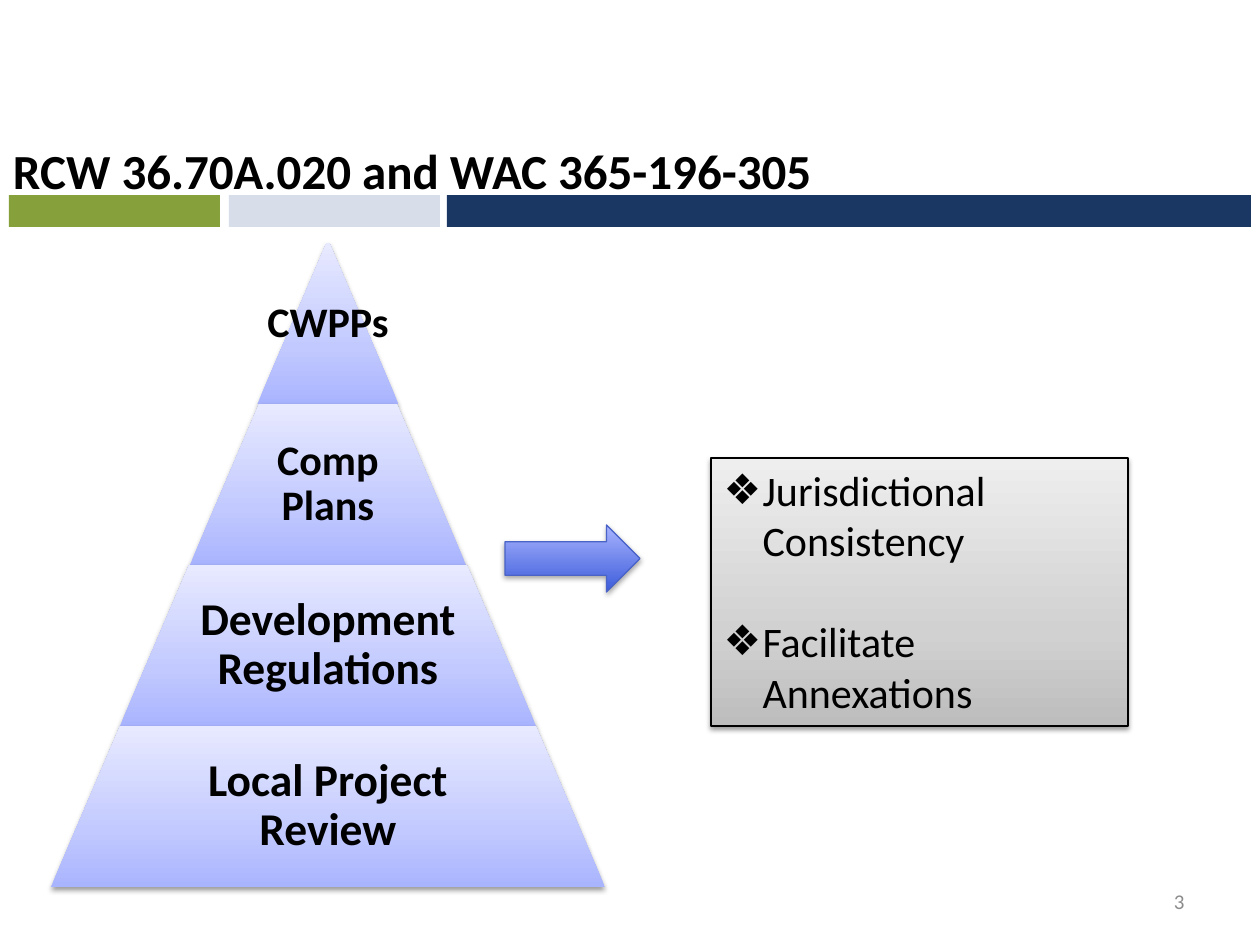
from dataclasses import dataclass

from lxml import etree
from pptx import Presentation
from pptx.dml.color import RGBColor
from pptx.enum.shapes import MSO_SHAPE
from pptx.enum.text import MSO_ANCHOR, MSO_AUTO_SIZE, PP_ALIGN
from pptx.oxml.ns import qn
from pptx.util import Emu, Pt

RECT, TRAP, ARROW = MSO_SHAPE.RECTANGLE, MSO_SHAPE.TRAPEZOID, MSO_SHAPE.RIGHT_ARROW
LEFT, MID, RIGHT = PP_ALIGN.LEFT, PP_ALIGN.CENTER, PP_ALIGN.RIGHT
TOP, CENTER = MSO_ANCHOR.TOP, MSO_ANCHOR.MIDDLE
FIXED = MSO_AUTO_SIZE.NONE
SCALE = 914400 / 126


@dataclass(frozen=True)
class Theme:
    font: str = "Calibri"
    ink: str = "000000"
    faint: str = "8C8C8C"
    edge: str = "4963C7"
    green: str = "86A13C"
    pale: str = "D7DEEA"
    navy: str = "1A3662"
    # Gradient stops run from bottom to top
    tier: tuple = ((0, "A9B4FF"), (35, "C2C9FF"), (100, "E8EAFF"))
    panel: tuple = ((0, "BDBDBD"), (35, "D1D1D1"), (100, "EEEEEE"))
    arrow: tuple = ((0, "3C5CDA"), (100, "A9B4FF"))
    title: int = 28
    large: int = 26
    body: int = 24
    small: int = 12


THEME = Theme()


def px(n):
    return Emu(round(n * SCALE))


def rgb(code):
    return RGBColor.from_string(code)


def apply(target, values):
    for name, value in values.items():
        setattr(target, name, value)


def place(shape, box):
    apply(shape, dict(zip(("left", "top", "width", "height"), map(px, box))))


def node(parent, tag, **attrs):
    return etree.SubElement(parent, qn(tag), {k: str(v) for k, v in attrs.items()})


def shade(shape, stops, alpha=38):
    """Give a shape an upward gradient and a soft shadow below."""
    shape.fill.gradient()
    shape.fill.gradient_angle = 90
    props = shape._element.spPr
    ramp = props.find(qn("a:gradFill")).find(qn("a:gsLst"))
    for old in list(ramp):
        ramp.remove(old)
    for pos, code in stops:
        node(node(ramp, "a:gs", pos=pos * 1000), "a:srgbClr", val=code)
    shape.shadow.inherit = False
    cast = node(props.find(qn("a:effectLst")), "a:outerShdw", blurRad=Pt(3.1),
                dist=Pt(1.6), dir=90 * 60000, rotWithShape=0)
    node(node(cast, "a:srgbClr", val=THEME.ink), "a:alpha", val=alpha * 1000)


def edge(shape, code=None):
    if code is None:
        shape.line.fill.background()
    else:
        shape.line.color.rgb = rgb(code)
        shape.line.width = Pt(0.75)


def write(shape, lines, size, color=THEME.ink, bold=False, align=LEFT,
          frame=None, para=None):
    """Fill a text frame, one paragraph a line."""
    text = shape.text_frame
    text.text = "\n".join(lines)
    apply(text, {"word_wrap": True, "auto_size": FIXED, **(frame or {})})
    for item in text.paragraphs:
        apply(item, {"alignment": align, "space_before": Pt(0), **(para or {})})
        apply(item.font, {"name": THEME.font, "size": Pt(size), "bold": bold})
        item.font.color.rgb = rgb(color)
    return text


def label(slide, box, text, size, **style):
    shape = slide.shapes.add_textbox(*map(px, box))
    write(shape, [text], size, **style)


def bar(slide, left, width, color):
    shape = slide.shapes.add_shape(RECT, *map(px, (left, 195, width, 32)))
    shape.fill.solid()
    shape.fill.fore_color.rgb = rgb(color)
    edge(shape)
    shape.shadow.inherit = False


def tier(slide, top, width, room, slant, text, size):
    """Draw one pyramid level with its label on the shared axis."""
    axis, height = 328, 161
    shape = slide.shapes.add_shape(
        TRAP, *map(px, (axis - width / 2, top, width, height)))
    shape.adjustments[0] = slant
    shade(shape, THEME.tier)
    edge(shape)
    sides = ("left", "top", "right", "bottom")
    frame = {f"margin_{side}": px(4) for side in sides}
    label(slide, (axis - room / 2, top, room, height), text, size, bold=True,
          align=MID, frame={**frame, "vertical_anchor": CENTER},
          para={"line_spacing": 0.9})


def panel(shape, items):
    """Turn the body placeholder into a shaded list."""
    place(shape, (711, 458, 417, 268))
    shade(shape, THEME.panel)
    edge(shape, THEME.ink)
    text = write(shape, items, THEME.body, frame={"vertical_anchor": TOP})
    for item in text.paragraphs[1:]:
        item.space_before = Pt(29)
    for item in text.paragraphs:
        props = item._p.get_or_add_pPr()
        props.set("marL", str(px(39)))
        props.set("indent", str(px(-39)))
        node(props, "a:buChar", char="❖")


def main():
    deck = Presentation()
    deck.slide_width, deck.slide_height = px(1260), px(945)
    slide = deck.slides.add_slide(deck.slide_layouts[1])
    title, body = slide.placeholders

    # Title and rule
    place(title, (0, 134, 1156, 72))
    write(title, ["RCW 36.70A.020 and WAC 365-196-305"], THEME.title, bold=True,
          frame={"vertical_anchor": TOP, "margin_left": px(13)})
    for left, width, color in ((9, 211, THEME.green), (229, 211, THEME.pale),
                               (447, 804, THEME.navy)):
        bar(slide, left, width, color)

    # Pyramid
    tiers = ((141, 141, 0.49, "CWPPs", THEME.body),
             (276, 179, 0.43, "Comp Plans", THEME.body),
             (416, 271, 0.43, "Development Regulations", THEME.large),
             (554, 360, 0.43, "Local Project Review", THEME.large))
    for row, parts in enumerate(tiers):
        tier(slide, 243 + 161 * row, *parts)

    # Arrow and outcomes
    panel(body, ["Jurisdictional Consistency", "Facilitate Annexations"])
    arrow = slide.shapes.add_shape(ARROW, *map(px, (505, 525, 135, 67)))
    shade(arrow, THEME.arrow, 35)
    edge(arrow, THEME.edge)

    # Page number
    label(slide, (903, 876, 294, 50), "3", THEME.small, color=THEME.faint,
          align=RIGHT, frame={"vertical_anchor": CENTER})
    deck.save("out.pptx")


if __name__ == "__main__":
    main()
